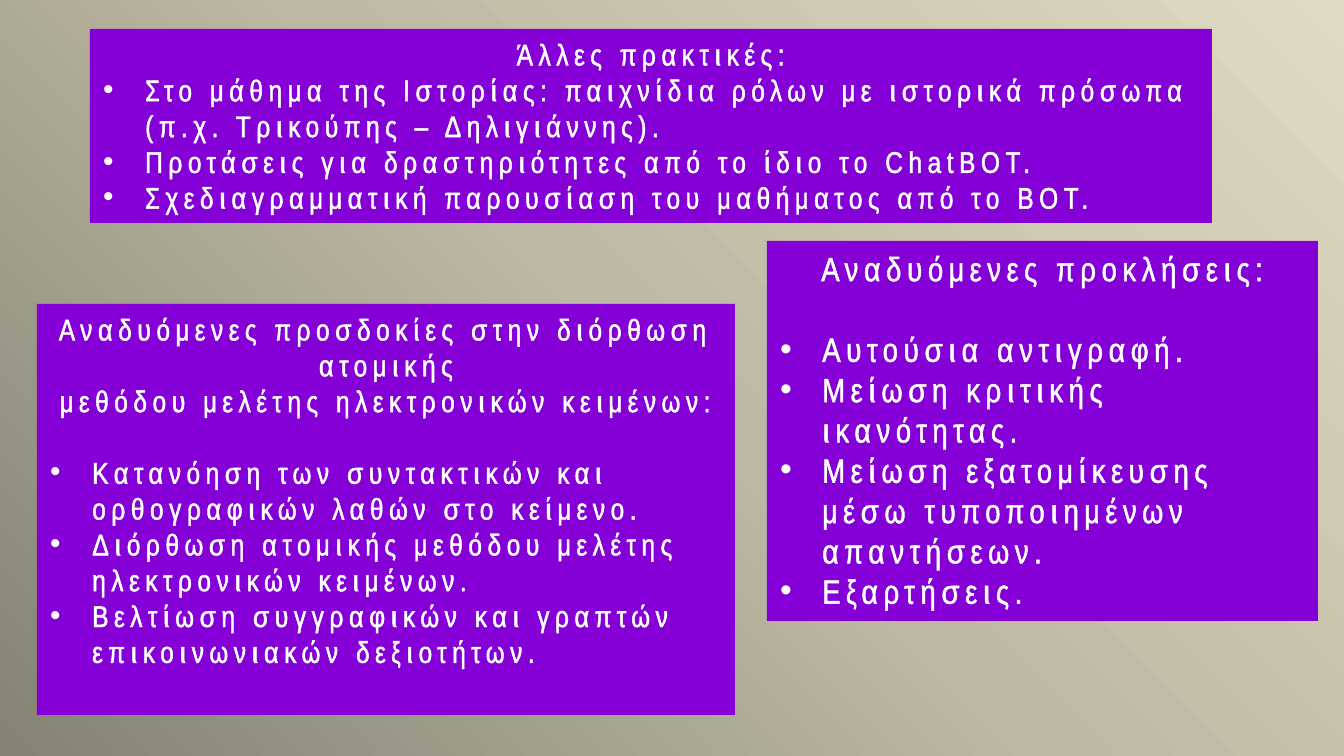
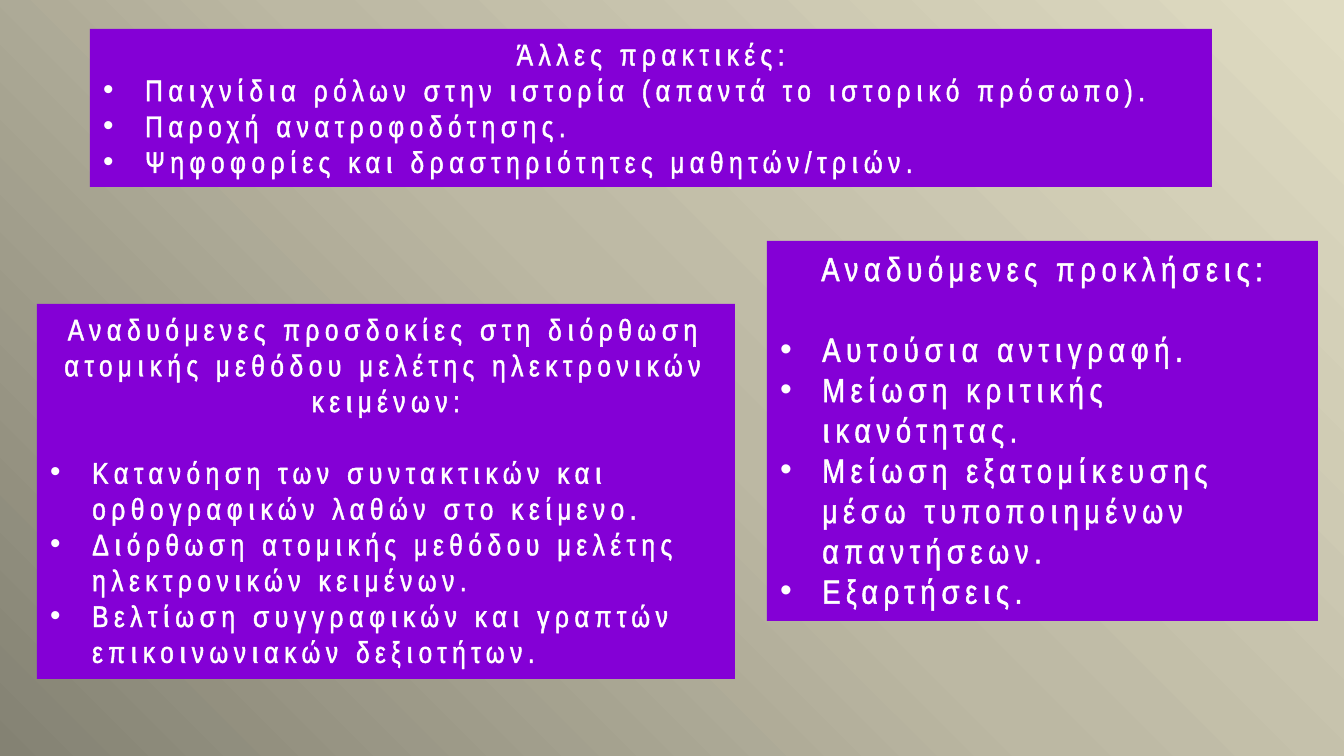
from copy import deepcopy
from dataclasses import dataclass

from pptx import Presentation
from pptx.dml.color import RGBColor
from pptx.enum.shapes import MSO_SHAPE
from pptx.enum.text import MSO_ANCHOR, MSO_AUTO_SIZE, PP_ALIGN
from pptx.oxml import parse_xml
from pptx.oxml.ns import nsdecls, qn
from pptx.util import Inches, Pt

PX_PER_INCH = 134.4
PAGE_WIDTH, PAGE_HEIGHT = 1344, 756


@dataclass(frozen=True)
class Theme:
    panel: str = "8400D6"
    text: str = "FFFFFF"
    backdrop: tuple = ((0, "848273"), (0.5, "BCB8A3"), (1, "DFDBC2"))
    font: str = "Arial Narrow"
    body_size: int = 16
    large_size: int = 18
    line_height: float = 1.2
    letter_spacing: int = 3


THEME = Theme()

PRACTICES_TITLE = ["Άλλες πρακτικές:"]
CHALLENGES_TITLE = ["Αναδυόμενες προκλήσεις:"]
CHALLENGES = [
    "Αυτούσια αντιγραφή.",
    "Μείωση κριτικής ικανότητας.",
    "Μείωση εξατομίκευσης μέσω τυποποιημένων απαντήσεων.",
    "Εξαρτήσεις.",
]
EXPECTATIONS = [
    "Κατανόηση των συντακτικών και ορθογραφικών λαθών στο κείμενο.",
    "Διόρθωση ατομικής μεθόδου μελέτης ηλεκτρονικών κειμένων.",
    "Βελτίωση συγγραφικών και γραπτών επικοινωνιακών δεξιοτήτων.",
]


def px(length):
    return Inches(length / PX_PER_INCH)


def add_rectangle(page, left, top, width, height):
    box = page.shapes.add_shape(
        MSO_SHAPE.RECTANGLE, px(left), px(top), px(width), px(height))
    box.shadow.inherit = False
    box.line.fill.background()
    return box


def add_backdrop(page):
    box = add_rectangle(page, -1, 0, PAGE_WIDTH + 1, PAGE_HEIGHT + 1)
    box.fill.gradient()
    box.fill.gradient_angle = 45
    stop_list = box.element.spPr.find(".//" + qn("a:gsLst"))
    stop_list.insert(1, deepcopy(stop_list[0]))
    for stop, (position, color) in zip(box.fill.gradient_stops, THEME.backdrop):
        stop.position = position
        stop.color.rgb = RGBColor.from_string(color)


def write_paragraph(para, text, size, align):
    span = para.add_run()
    span.text = text
    para.alignment = align
    para.font.size = Pt(size)
    para.font.name = THEME.font
    para.font.color.rgb = RGBColor.from_string(THEME.text)
    span_properties = span._r.get_or_add_rPr()
    span_properties.set("spc", str(THEME.letter_spacing * 100))
    span_properties.insert(0, parse_xml(
        f'<a:ln {nsdecls("a")} w="{Pt(1)}"><a:solidFill>'
        f'<a:srgbClr val="{THEME.text}"/></a:solidFill></a:ln>'))


def add_bullet(para):
    """Give the paragraph a hanging bullet, placed before its default font."""
    properties = para._p.get_or_add_pPr()
    properties.set("marL", str(px(42)))
    properties.set("indent", str(-px(42)))
    default_font = properties.find(qn("a:defRPr"))
    default_font.addprevious(parse_xml(
        f'<a:buFont {nsdecls("a")} typeface="Arial"/>'))
    default_font.addprevious(parse_xml(
        f'<a:buChar {nsdecls("a")} char="•"/>'))


def add_panel(page, area, titles, bullets, size=THEME.body_size,
              title_gap=True, spare=0):
    """Add centred titles over a bullet list; spare is extra room below, in px."""
    box = add_rectangle(page, *area)
    box.fill.solid()
    box.fill.fore_color.rgb = RGBColor.from_string(THEME.panel)
    frame = box.text_frame
    frame.word_wrap = True
    frame.auto_size = MSO_AUTO_SIZE.SHAPE_TO_FIT_TEXT
    frame.vertical_anchor = MSO_ANCHOR.TOP
    frame.margin_bottom = Inches(0.05) + px(spare)

    for index, text in enumerate(titles + bullets):
        para = frame.add_paragraph() if index else frame.paragraphs[0]
        is_title = index < len(titles)
        write_paragraph(para, text, size,
                        PP_ALIGN.CENTER if is_title else PP_ALIGN.LEFT)
        if not is_title:
            add_bullet(para)
        if title_gap and index == len(titles):
            para.space_before = Pt(size * THEME.line_height)


def add_page(deck, practices, practices_height, expectations_title,
             expectations_height, spare=0):
    page = deck.slides.add_slide(deck.slide_layouts[6])
    add_backdrop(page)
    add_panel(page, (90, 29, 1122, practices_height),
              PRACTICES_TITLE, practices, title_gap=False)
    add_panel(page, (37, 304, 698, expectations_height),
              expectations_title, EXPECTATIONS, spare=spare)
    add_panel(page, (767, 241, 551, 380),
              CHALLENGES_TITLE, CHALLENGES, size=THEME.large_size)


def main():
    deck = Presentation()
    deck.slide_width = px(PAGE_WIDTH)
    deck.slide_height = px(PAGE_HEIGHT)
    add_page(
        deck,
        practices=[
            "Στο μάθημα της Ιστορίας: παιχνίδια ρόλων με ιστορικά πρόσωπα "
            "(π.χ. Τρικούπης – Δηλιγιάννης).",
            "Προτάσεις για δραστηριότητες από το ίδιο το ChatBOT.",
            "Σχεδιαγραμματική παρουσίαση του μαθήματος από το BOT.",
        ],
        practices_height=194,
        expectations_title=[
            "Αναδυόμενες προσδοκίες στην διόρθωση ατομικής",
            "μεθόδου μελέτης ηλεκτρονικών κειμένων:",
        ],
        expectations_height=411,
        spare=36,
    )
    add_page(
        deck,
        practices=[
            "Παιχνίδια ρόλων στην ιστορία (απαντά το ιστορικό πρόσωπο).",
            "Παροχή ανατροφοδότησης.",
            "Ψηφοφορίες και δραστηριότητες μαθητών/τριών.",
        ],
        practices_height=158,
        expectations_title=[
            "Αναδυόμενες προσδοκίες στη διόρθωση ατομικής μεθόδου μελέτης "
            "ηλεκτρονικών κειμένων:",
        ],
        expectations_height=375,
    )
    deck.save("out.pptx")


if __name__ == "__main__":
    main()
